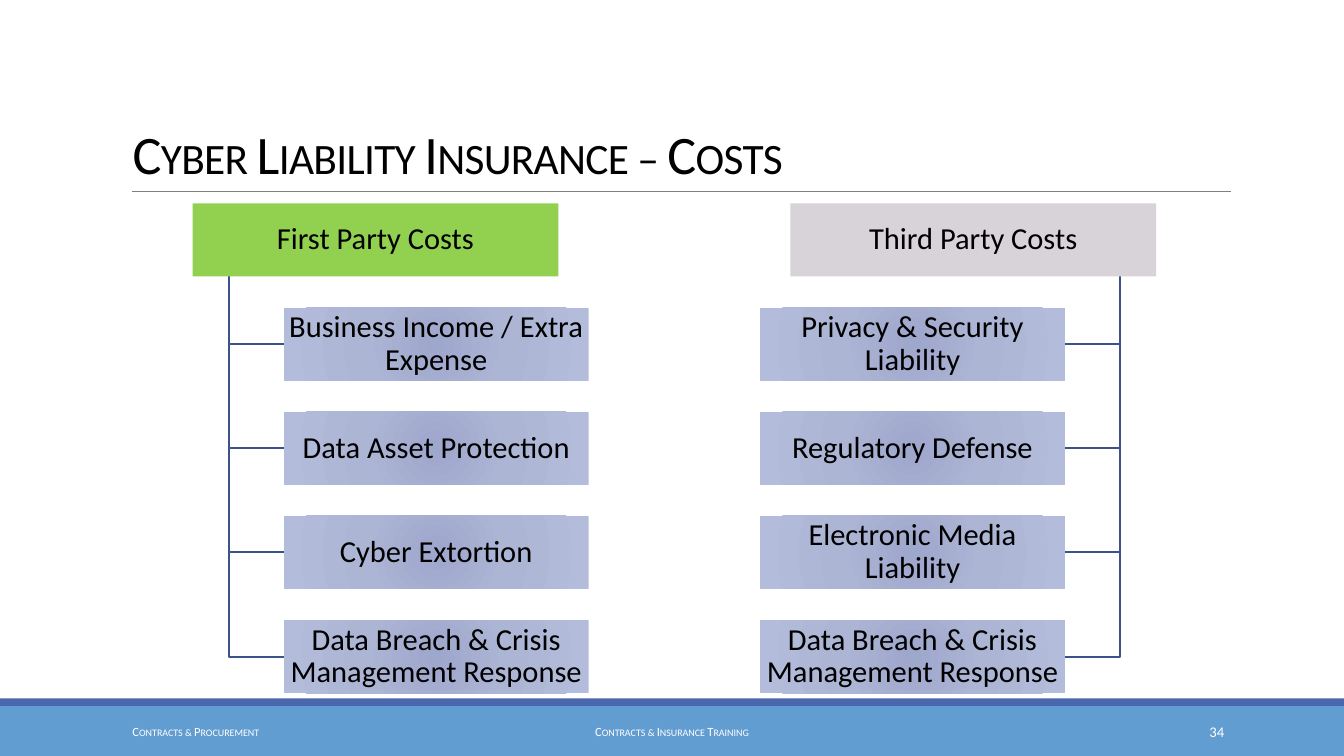
"""Build the cyber liability insurance costs slide."""
from dataclasses import dataclass

from lxml.etree import SubElement
from pptx import Presentation
from pptx.dml.color import RGBColor
from pptx.enum.shapes import MSO_CONNECTOR as Connector, MSO_SHAPE as Shape
from pptx.enum.text import MSO_ANCHOR as Anchor, MSO_AUTO_SIZE as AutoSize, PP_ALIGN as Align
from pptx.oxml import parse_xml
from pptx.oxml.ns import nsdecls, qn
from pptx.util import Cm, Pt

TITLE = "Cyber Liability Insurance – Costs"
COLUMNS = [
    {"header": "First Party Costs", "fill": "92D050", "left": 4.01, "direction": 1,
     "items": ["Business Income / Extra Expense", "Data Asset Protection",
               "Cyber Extortion", "Data Breach & Crisis Management Response"]},
    {"header": "Third Party Costs", "fill": "D8D3D9", "left": 16.46, "direction": -1,
     "items": ["Privacy & Security Liability", "Regulatory Defense",
               "Electronic Media Liability", "Data Breach & Crisis Management Response"]},
]
FOOTERS = [
    ("Contracts & Procurement", 2.51, 5.66, Align.LEFT, 7.4, True),
    ("Contracts & Insurance Training", 8.46, 11.07, Align.CENTER, 7.4, True),
    ("34", 22.73, 3.02, Align.RIGHT, 8.7, False),
]


@dataclass(frozen=True)
class Theme:
    """Colours, font and type sizes."""
    font: str = "Calibri"
    text: str = "000000"
    light: str = "FFFFFF"
    rule: str = "808080"
    branch: str = "3B528A"
    band: str = "629DD1"
    stripe: str = "4A66AC"
    glow: tuple = ((0, "9EA7CC"), (45, "ADB5D5"), (100, "B4BCDC"))
    title_size: float = 32
    box_size: float = 18


THEME = Theme()
SLIDE_WIDTH, SLIDE_HEIGHT = 27.99, 15.75
HEADER_TOP, HEADER_WIDTH, BOX_WIDTH, BOX_HEIGHT = 4.24, 7.62, 6.35, 1.52
ROW_PITCH, SPINE_INSET, BRANCH_LENGTH = 2.17, 0.76, 1.14
RULE_Y, BAND_TOP, STRIPE_TOP = 3.99, 14.71, 14.55


def color(value):
    """Return a colour from its hexadecimal value."""
    return RGBColor.from_string(value)


def write(shape, text, size, ink, align, anchor, spacing=1.0, small_caps=False):
    """Set a single formatted run in a shape and return it."""
    frame = shape.text_frame
    frame.word_wrap = True
    frame.auto_size = AutoSize.NONE
    frame.vertical_anchor = anchor
    paragraph = frame.paragraphs[0]
    paragraph.alignment = align
    paragraph.line_spacing = spacing
    run = paragraph.add_run()
    run.text = text
    run.font.name = THEME.font
    run.font.size = Pt(size)
    run.font.color.rgb = color(ink)
    if small_caps:
        run._r.get_or_add_rPr().set("cap", "small")
    return run


def add_rectangle(slide, left, top, width, height, fill=None):
    """Add a borderless rectangle, filled with a colour or the radial glow."""
    shape = slide.shapes.add_shape(Shape.RECTANGLE, Cm(left), Cm(top), Cm(width), Cm(height))
    shape.shadow.inherit = False
    shape.line.fill.background()
    if fill:
        shape.fill.solid()
        shape.fill.fore_color.rgb = color(fill)
    else:
        stops = "".join(f'<a:gs pos="{position * 1000}"><a:srgbClr val="{value}"/></a:gs>'
                        for position, value in THEME.glow)
        gradient = parse_xml(
            f'<a:gradFill {nsdecls("a")} rotWithShape="1"><a:gsLst>{stops}</a:gsLst>'
            '<a:path path="circle"><a:fillToRect l="50000" t="50000" r="50000" b="50000"/>'
            '</a:path></a:gradFill>')
        shape._element.spPr.find(qn("a:prstGeom")).addnext(gradient)
    return shape


def add_box(slide, text, left, top, width, fill=None):
    """Add a rectangle with a centred label."""
    shape = add_rectangle(slide, left, top, width, BOX_HEIGHT, fill)
    frame = shape.text_frame
    frame.margin_left = frame.margin_right = frame.margin_top = frame.margin_bottom = Cm(0.03)
    write(shape, text, THEME.box_size, THEME.text, Align.CENTER, Anchor.MIDDLE, 0.9)


def add_branch(slide, spine, top, end, bottom):
    """Add an open elbow running down the spine and across to a box."""
    builder = slide.shapes.build_freeform(Cm(spine), Cm(top))
    builder.add_line_segments([(Cm(spine), Cm(bottom)), (Cm(end), Cm(bottom))], close=False)
    branch = builder.convert_to_shape()
    branch.shadow.inherit = False
    branch.fill.background()
    branch.line.color.rgb = color(THEME.branch)
    branch.line.width = Pt(1.25)


def add_column(slide, header, fill, left, direction, items):
    """Add a header with its items hanging from a spine on the outer side."""
    outer_edge = left if direction > 0 else left + HEADER_WIDTH
    spine = outer_edge + direction * SPINE_INSET
    branch_end = spine + direction * BRANCH_LENGTH
    box_left = branch_end if direction > 0 else branch_end - BOX_WIDTH
    tops = [HEADER_TOP + ROW_PITCH * row for row in range(1, len(items) + 1)]
    for top in tops:
        add_branch(slide, spine, HEADER_TOP + BOX_HEIGHT, branch_end, top + BOX_HEIGHT / 2)
    add_box(slide, header, left, HEADER_TOP, HEADER_WIDTH, fill)
    for item, top in zip(items, tops):
        add_box(slide, item, box_left, top, BOX_WIDTH)


def add_title(slide):
    """Fill the title placeholder and draw the rule beneath it."""
    title = slide.shapes.title
    title.left, title.top, title.width, title.height = Cm(2.51), Cm(0.66), Cm(23.09), Cm(3.33)
    run = write(title, TITLE, THEME.title_size, THEME.text, Align.LEFT, Anchor.BOTTOM, 0.85, True)
    run._r.get_or_add_rPr().set("spc", "-40")
    rule = slide.shapes.add_connector(Connector.STRAIGHT, Cm(2.74), Cm(RULE_Y),
                                      Cm(25.63), Cm(RULE_Y))
    rule.line.color.rgb = color(THEME.rule)
    rule.line.width = Pt(0.5)
    SubElement(rule._element.spPr, qn("a:effectLst"))


def add_footer(slide):
    """Add the footer bands and their labels."""
    add_rectangle(slide, 0, BAND_TOP, SLIDE_WIDTH, SLIDE_HEIGHT - BAND_TOP, THEME.band)
    add_rectangle(slide, 0, STRIPE_TOP, SLIDE_WIDTH, BAND_TOP - STRIPE_TOP, THEME.stripe)
    for text, left, width, align, size, small_caps in FOOTERS:
        label = slide.shapes.add_textbox(Cm(left), Cm(14.83), Cm(width), Cm(0.84))
        write(label, text, size, THEME.light, align, Anchor.MIDDLE, small_caps=small_caps)


def main():
    """Assemble and save the presentation."""
    presentation = Presentation()
    presentation.slide_width, presentation.slide_height = Cm(SLIDE_WIDTH), Cm(SLIDE_HEIGHT)
    slide = presentation.slides.add_slide(presentation.slide_layouts[5])
    add_title(slide)
    add_footer(slide)
    for column in COLUMNS:
        add_column(slide, **column)
    presentation.save("out.pptx")


if __name__ == "__main__":
    main()
